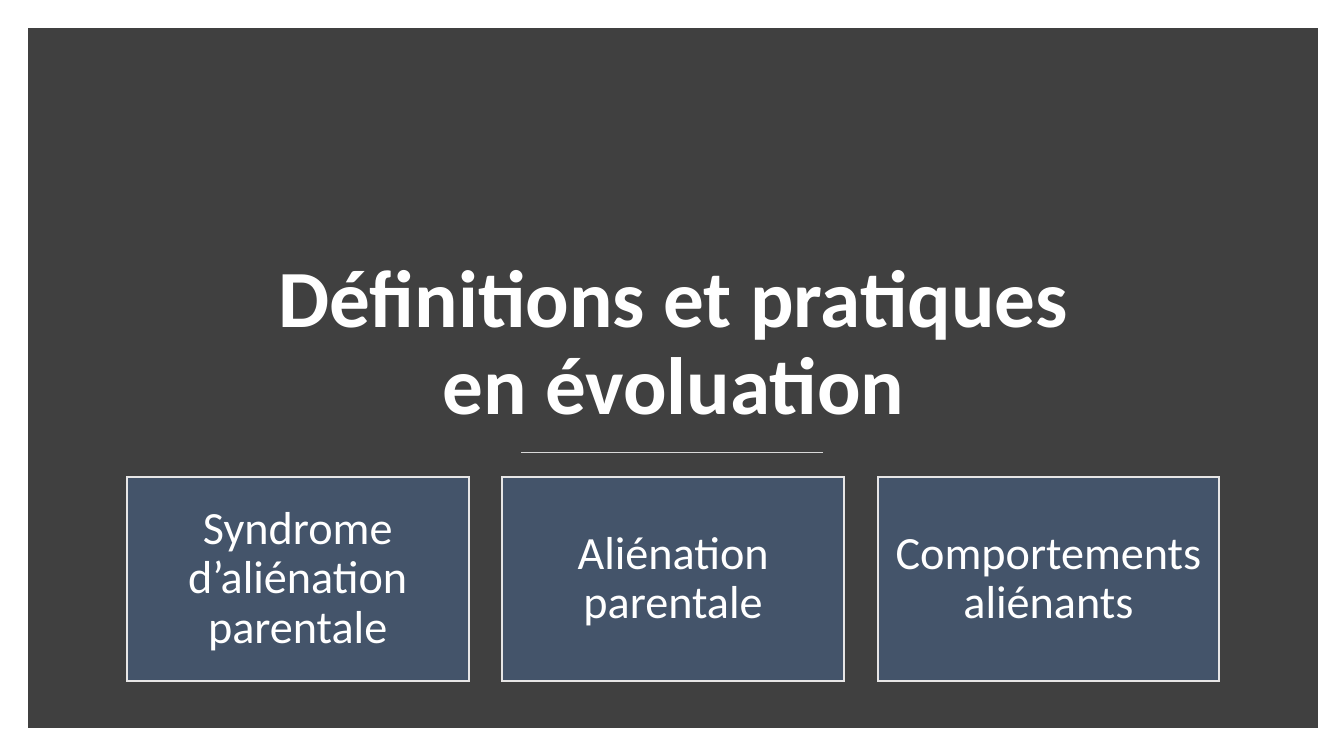
from dataclasses import dataclass

from lxml.etree import SubElement
from pptx import Presentation
from pptx.dml.color import RGBColor
from pptx.enum.shapes import MSO_CONNECTOR, MSO_SHAPE
from pptx.enum.text import MSO_ANCHOR, PP_ALIGN
from pptx.oxml.ns import qn
from pptx.util import Cm, Pt


@dataclass(frozen=True)
class Theme:
    font: str = "Calibri"
    panel: str = "404040"
    card: str = "44546A"
    card_line: str = "E7E6E6"
    rule: str = "D9D9D9"
    text: str = "FFFFFF"
    title_size: float = 58
    card_size: float = 33


THEME = Theme()
TOPICS = [
    "Syndrome d’aliénation parentale",
    "Aliénation parentale",
    "Comportements aliénants",
]


def add_rectangle(page, box, fill, line, line_width):
    """Draw a flat, square-cornered rectangle; box is in centimetres."""
    shape = page.shapes.add_shape(MSO_SHAPE.RECTANGLE, *map(Cm, box))
    shape.shadow.inherit = False
    shape.fill.solid()
    shape.fill.fore_color.rgb = RGBColor.from_string(fill)
    shape.line.color.rgb = RGBColor.from_string(line)
    shape.line.width = Pt(line_width)
    SubElement(shape.line._get_or_add_ln(), qn("a:miter"), lim="800000")
    return shape


def write_text(shape, text, size, anchor, bold=False):
    frame = shape.text_frame
    frame.word_wrap = True
    frame.vertical_anchor = anchor
    para = frame.paragraphs[0]
    para.alignment = PP_ALIGN.CENTER
    para.line_spacing = 0.9
    span = para.add_run()
    span.text = text
    span.font.name = THEME.font
    span.font.size = Pt(size)
    span.font.bold = bold
    span.font.color.rgb = RGBColor.from_string(THEME.text)
    return frame


def add_title(page, box):
    left, top, width, height = box
    title = page.shapes.add_textbox(*map(Cm, box))
    write_text(title, "Définitions et pratiques en évoluation",
               THEME.title_size, MSO_ANCHOR.BOTTOM, bold=True)

    # Short rule centred under the title
    rule_width = 7.62
    start = left + (width - rule_width) / 2 - 0.03
    rule_top = top + height + 0.38
    rule = page.shapes.add_connector(
        MSO_CONNECTOR.STRAIGHT, Cm(start), Cm(rule_top),
        Cm(start + rule_width), Cm(rule_top))
    rule.line.color.rgb = RGBColor.from_string(THEME.rule)
    rule.line.width = Pt(1)
    SubElement(rule._element.spPr, qn("a:effectLst"))


def add_topic_cards(page, box, topics, gap=0.85):
    left, top, width, height = box
    card_width = (width - gap * (len(topics) - 1)) / len(topics)
    for index, topic in enumerate(topics):
        card_left = left + index * (card_width + gap)
        card = add_rectangle(page, (card_left, top, card_width, height),
                             THEME.card, THEME.card_line, 1.5)
        frame = write_text(card, topic, THEME.card_size, MSO_ANCHOR.MIDDLE)
        frame.margin_left = frame.margin_right = Cm(0.35)
        frame.margin_top = frame.margin_bottom = Cm(0.35)


def main():
    deck = Presentation()
    deck.slide_width, deck.slide_height = Cm(33.87), Cm(19.05)
    page = deck.slides.add_slide(deck.slide_layouts[6])

    # Dark panel, title, then the row of topics
    add_rectangle(page, (0.89, 0.89, 32.16, 17.27), THEME.panel, THEME.panel, 10)
    add_title(page, (6.43, 3.12, 21.08, 7.9))
    add_topic_cards(page, (3.2, 12.01, 27.53, 5.16), TOPICS)

    deck.save("out.pptx")


if __name__ == "__main__":
    main()
